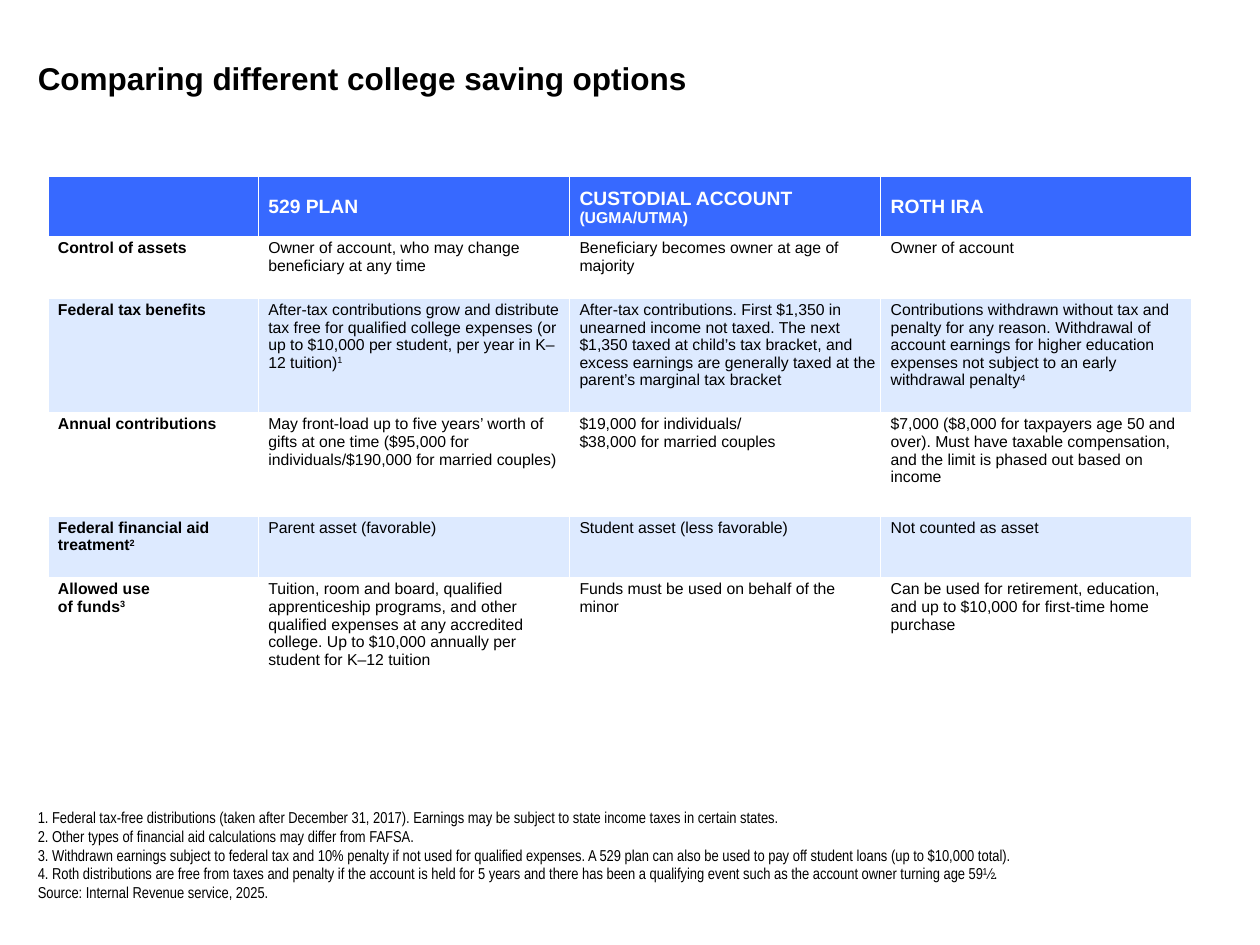
import pptx
import pptx.dml.color
import pptx.enum.text
import pptx.oxml
import pptx.oxml.ns
import pptx.util
from dataclasses import dataclass

Inches = pptx.util.Inches
Pt = pptx.util.Pt
Anchor = pptx.enum.text.MSO_ANCHOR

TITLE = "Comparing different college saving options"

# A caret marks the superscript that follows it; a newline is a line break.
HEADINGS = ["", "529 PLAN", "CUSTODIAL ACCOUNT ", "ROTH IRA"]
HEADING_NOTES = {2: "(UGMA/UTMA)"}
ROWS = [
    ["Control of assets",
     "Owner of account, who may change beneficiary at any time",
     "Beneficiary becomes owner at age of majority",
     "Owner of account"],
    ["Federal tax benefits",
     "After-tax contributions grow and distribute tax free for qualified college "
     "expenses (or up to $10,000 per student, per year in K–12 tuition)^1",
     "After-tax contributions. First $1,350 in unearned income not taxed. The next "
     "$1,350 taxed at child’s tax bracket, and excess earnings are generally taxed "
     "at the parent’s marginal tax bracket",
     "Contributions withdrawn without tax and penalty for any reason. Withdrawal of "
     "account earnings for higher education expenses not subject to an early "
     "withdrawal penalty^4"],
    ["Annual contributions",
     "May front-load up to five years’ worth of gifts at one time ($95,000 for "
     "individuals/$190,000 for married couples)",
     "$19,000 for individuals/\n$38,000 for married couples",
     "$7,000 ($8,000 for taxpayers age 50 and over). Must have taxable compensation, "
     "and the limit is phased out based on income"],
    ["Federal financial aid treatment^2",
     "Parent asset (favorable)",
     "Student asset (less favorable)",
     "Not counted as asset"],
    ["Allowed use \nof funds^3",
     "Tuition, room and board, qualified apprenticeship programs, and other qualified "
     "expenses at any accredited college. Up to $10,000 annually per student for "
     "K–12 tuition",
     "Funds must be used on behalf of the minor",
     "Can be used for retirement, education, and up to $10,000 for first-time home "
     "purchase"],
]
FOOTNOTES = [
    "1. Federal tax-free distributions (taken after December 31, 2017). Earnings may be "
    "subject to state income taxes in certain states.",
    "2. Other types of financial aid calculations may differ from FAFSA.",
    "3. Withdrawn earnings subject to federal tax and 10% penalty if not used for "
    "qualified expenses. A 529 plan can also be used to pay off student loans (up to "
    "$10,000 total).",
    "4. Roth distributions are free from taxes and penalty if the account is held for 5 "
    "years and there has been a qualifying event such as the account owner turning age "
    "59½.",
    "Source: Internal Revenue service, 2025.",
]

SLIDE_SIZE = (10, 7.5)
TITLE_AREA = (0.3, 0.47, 7, 0.7)
FOOTNOTE_AREA = (0.3, 6.4, 9.3, 0.76)
TABLE_CORNER = (0.38, 1.4)
COLUMN_WIDTHS = [1.67] + [2.47] * 3
ROW_HEIGHTS = [0.48, 0.49, 0.91, 0.82, 0.49, 0.91]
FOOTNOTE_INDENT = 0.09


@dataclass(frozen=True)
class Theme:
    font: str = "Arial"
    note_font: str = "Arial Narrow"
    title_size: int = 18
    heading_size: int = 11
    body_size: int = 9
    ink: str = "000000"
    white: str = "FFFFFF"
    heading_fill: str = "3769FF"
    band_fill: str = "DDEAFF"


THEME = Theme()


def style(font, size, color, bold=False, name=THEME.font):
    font.name, font.size, font.bold = name, Pt(size), bold
    font.color.rgb = pptx.dml.color.RGBColor.from_string(color)


def write(para, text):
    """Add text with its line breaks and superscript marks."""
    body, _, mark = text.partition("^")
    for index, line in enumerate(body.split("\n")):
        if index:
            para.add_line_break()
        para.add_run().text = line
    if mark:
        span = para.add_run()
        span.text = mark
        span._r.get_or_add_rPr().set("baseline", "30000")


def set_margins(target, left=0, top=0, right=0, bottom=0):
    target.margin_left, target.margin_top = Inches(left), Inches(top)
    target.margin_right, target.margin_bottom = Inches(right), Inches(bottom)


def paint(cell, color):
    """Fill a cell and give it thin white borders."""
    cell.fill.solid()
    cell.fill.fore_color.rgb = pptx.dml.color.RGBColor.from_string(color)
    properties = cell._tc.get_or_add_tcPr()
    for position, side in enumerate("LRTB"):
        properties.insert(position, pptx.oxml.parse_xml(
            f'<a:ln{side} {pptx.oxml.ns.nsdecls("a")} w="{Pt(1)}"><a:solidFill>'
            f'<a:srgbClr val="{THEME.white}"/></a:solidFill></a:ln{side}>'))


def add_text(page, area, anchor):
    frame = page.shapes.add_textbox(*map(Inches, area)).text_frame
    frame.word_wrap, frame.vertical_anchor = True, anchor
    set_margins(frame)
    return frame


def add_comparison(page):
    table = page.shapes.add_table(
        len(ROW_HEIGHTS), len(COLUMN_WIDTHS), *map(Inches, TABLE_CORNER),
        Inches(sum(COLUMN_WIDTHS)), Inches(sum(ROW_HEIGHTS))).table
    for column, width in zip(table.columns, COLUMN_WIDTHS):
        column.width = Inches(width)
    for row, height in zip(table.rows, ROW_HEIGHTS):
        row.height = Inches(height)

    for column, heading in enumerate(HEADINGS):
        cell = table.cell(0, column)
        paint(cell, THEME.heading_fill)
        cell.vertical_anchor = Anchor.MIDDLE
        set_margins(cell, 0.08, 0.01, 0.01)
        para = cell.text_frame.paragraphs[0]
        style(para.font, THEME.heading_size, THEME.white, bold=True)
        if heading:
            write(para, heading)
        if column in HEADING_NOTES:
            span = para.add_run()
            span.text = HEADING_NOTES[column]
            span.font.size = Pt(THEME.body_size)

    for row, texts in enumerate(ROWS, start=1):
        for column, text in enumerate(texts):
            cell = table.cell(row, column)
            paint(cell, THEME.white if row % 2 else THEME.band_fill)
            set_margins(cell, 0.08, 0.02, 0.02 if column else 0.01, 0.02)
            para = cell.text_frame.paragraphs[0]
            style(para.font, THEME.body_size, THEME.ink, bold=column == 0)
            write(para, text)


def main():
    deck = pptx.Presentation()
    deck.slide_width, deck.slide_height = map(Inches, SLIDE_SIZE)
    page = deck.slides.add_slide(deck.slide_layouts[6])

    add_comparison(page)

    title = add_text(page, TITLE_AREA, Anchor.TOP).paragraphs[0]
    style(title.font, THEME.title_size, THEME.ink, bold=True)
    write(title, TITLE)

    notes = add_text(page, FOOTNOTE_AREA, Anchor.BOTTOM)
    for index, text in enumerate(FOOTNOTES):
        para = notes.add_paragraph() if index else notes.paragraphs[0]
        style(para.font, THEME.body_size, THEME.ink, name=THEME.note_font)
        properties = para._p.get_or_add_pPr()
        properties.set("marL", str(Inches(FOOTNOTE_INDENT)))
        properties.set("indent", str(-Inches(FOOTNOTE_INDENT)))
        write(para, text)

    deck.save("out.pptx")


if __name__ == "__main__":
    main()
